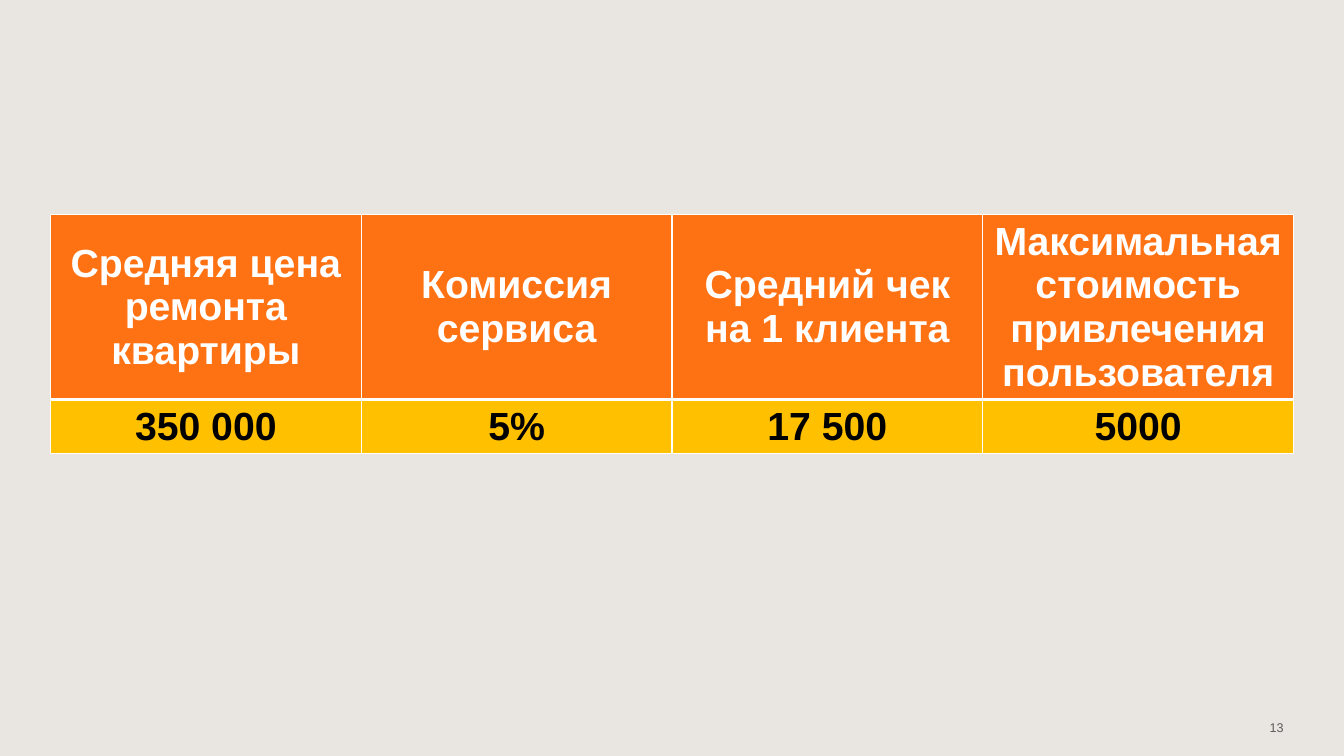
from lxml import etree
from pptx import Presentation
from pptx.dml.color import RGBColor
from pptx.enum.text import MSO_ANCHOR, PP_ALIGN
from pptx.oxml.ns import qn
from pptx.util import Inches, Pt

CENTER, RIGHT = PP_ALIGN.CENTER, PP_ALIGN.RIGHT
MIDDLE = MSO_ANCHOR.MIDDLE
BLANK_LAYOUT = 6

COLORS = {
    "background": "E9E5E1",
    "header": "FF7214",
    "header_text": "FFFFFF",
    "value": "FFC000",
    "value_text": "000000",
    "border": "FFFFFF",
    "page_number": "5D5C5A",
}
FONT = "Arial"
SLIDE_WIDTH, SLIDE_HEIGHT = Inches(13.33), Inches(7.5)
MARGIN = Inches(0.5)

HEADINGS = [
    "Средняя цена ремонта квартиры",
    "Комиссия сервиса",
    "Средний чек на 1 клиента",
    "Максимальная стоимость привлечения пользователя",
]
VALUES = ["350 000", "5%", "17 500", "5000"]


def color(name):
    return RGBColor.from_string(COLORS[name])


def write(text_frame, text, size, color_name, alignment, bold=False):
    paragraph = text_frame.paragraphs[0]
    paragraph.text = text
    paragraph.alignment = alignment
    font = paragraph.font
    font.name, font.size, font.bold = FONT, Pt(size), bold
    font.color.rgb = color(color_name)


def set_borders(cell, widths):
    """Draw cell borders; widths maps a side (L, R, T, B) to points."""
    properties = cell._tc.get_or_add_tcPr()
    for position, (side, width) in enumerate(widths.items()):
        line = etree.Element(qn(f"a:ln{side}"), w=str(Pt(width)))
        fill = etree.SubElement(line, qn("a:solidFill"))
        etree.SubElement(fill, qn("a:srgbClr"), val=COLORS["border"])
        properties.insert(position, line)


def add_price_table(slide, left, top, width, row_heights):
    rows = [
        (HEADINGS, "header", {"L": 1, "R": 1, "T": 1, "B": 3}),
        (VALUES, "value", {"L": 1, "R": 1, "T": 3, "B": 1}),
    ]
    table = slide.shapes.add_table(
        len(rows), len(HEADINGS), left, top, width, sum(row_heights)
    ).table
    for row, height in zip(table.rows, row_heights):
        row.height = height
    for row_index, (texts, style, borders) in enumerate(rows):
        for column_index, text in enumerate(texts):
            cell = table.cell(row_index, column_index)
            cell.fill.solid()
            cell.fill.fore_color.rgb = color(style)
            cell.vertical_anchor = MIDDLE
            write(cell.text_frame, text, 28, f"{style}_text", CENTER, bold=True)
            set_borders(cell, borders)


def add_page_number(slide, left, top, width, height):
    text_frame = slide.shapes.add_textbox(left, top, width, height).text_frame
    text_frame.word_wrap = True
    text_frame.vertical_anchor = MIDDLE
    write(text_frame, "13", 9, "page_number", RIGHT)


def main():
    presentation = Presentation()
    presentation.slide_width, presentation.slide_height = SLIDE_WIDTH, SLIDE_HEIGHT
    slide = presentation.slides.add_slide(presentation.slide_layouts[BLANK_LAYOUT])

    # Background
    slide.background.fill.solid()
    slide.background.fill.fore_color.rgb = color("background")

    # Table across the slide between the margins
    add_price_table(slide, MARGIN, Inches(2.13), SLIDE_WIDTH - 2 * MARGIN,
                    [Inches(1.83), Inches(0.53)])

    # Page number in the bottom right corner
    number_width = Inches(3)
    add_page_number(slide, SLIDE_WIDTH - MARGIN - number_width, Inches(7.02),
                    number_width, Inches(0.4))

    presentation.save("out.pptx")


if __name__ == "__main__":
    main()
